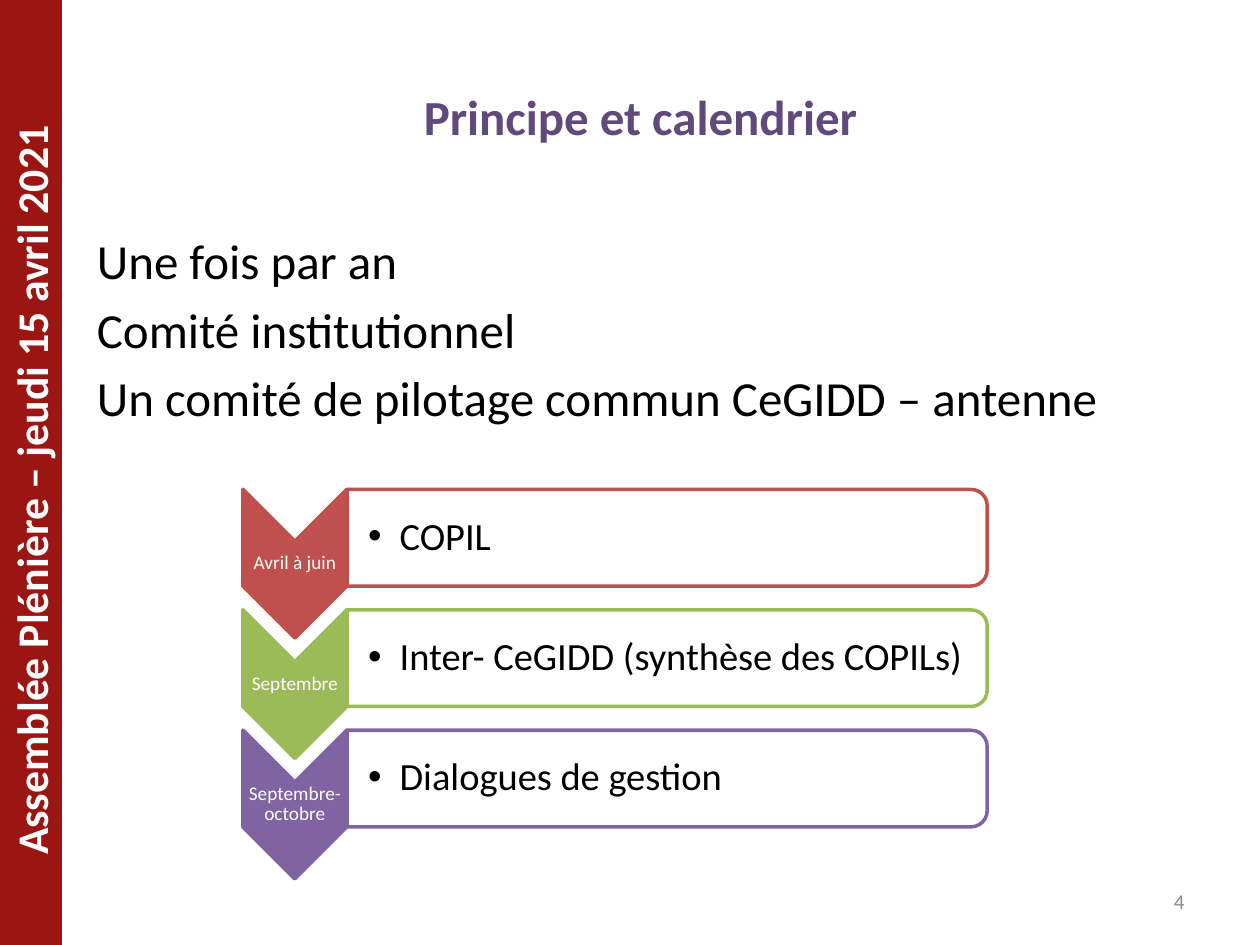
from lxml.etree import SubElement
from pptx import Presentation
from pptx.dml.color import RGBColor
from pptx.enum.shapes import MSO_SHAPE as Kind
from pptx.enum.text import MSO_ANCHOR as Anchor, PP_ALIGN as Align
from pptx.oxml.ns import qn
from pptx.util import Pt

FONT = "Calibri"
HUES = {
    "title": "604A7B", "band": "9B1513", "text": "000000", "white": "FFFFFF",
    "number": "8C8C8C", "red": "C0504D", "green": "9BBB59", "purple": "8064A2",
}
LINES = [
    "Une fois par an",
    "Comité institutionnel",
    "Un comité de pilotage commun CeGIDD – antenne",
]
STEPS = [
    ("Avril à juin", "COPIL", "red"),
    ("Septembre", "Inter- CeGIDD (synthèse des COPILs)", "green"),
    ("Septembre-octobre", "Dialogues de gestion", "purple"),
]
TOP, PITCH = 279.6, 68.8


def rgb(hue):
    return RGBColor.from_string(HUES[hue])


def style(para, size, hue, bold=False, align=Align.LEFT):
    para.alignment = align
    font = para.font
    font.name, font.size, font.bold = FONT, Pt(size), bold
    font.color.rgb = rgb(hue)


def add_text(slide, box, lines, size, hue, bold=False, align=Align.LEFT,
             anchor=Anchor.TOP, pad=(7.2, 3.6, 7.2, 3.6), wrap=True):
    shape = slide.shapes.add_textbox(*map(Pt, box))
    frame = shape.text_frame
    frame.word_wrap = wrap
    frame.vertical_anchor = anchor
    (frame.margin_left, frame.margin_top,
     frame.margin_right, frame.margin_bottom) = map(Pt, pad)
    frame.text = "\n".join(lines)
    for para in frame.paragraphs:
        style(para, size, hue, bold, align)
    return shape


def add_shape(slide, kind, box, fill, line=None, turn=0):
    shape = slide.shapes.add_shape(kind, *map(Pt, box))
    shape.shadow.inherit = False
    shape.rotation = turn
    shape.fill.solid()
    shape.fill.fore_color.rgb = rgb(fill)
    if line:
        shape.line.color.rgb = rgb(line)
        shape.line.width = Pt(2)
    else:
        shape.line.fill.background()


def add_bullet(para):
    props = para._p.get_or_add_pPr()
    props.set("marL", str(Pt(18)))
    props.set("indent", str(-Pt(18)))
    SubElement(props, qn("a:buFont"), typeface="Arial")
    SubElement(props, qn("a:buChar"), char="•")


def add_title(slide, text):
    title = slide.shapes.title
    title.left, title.top, title.width, title.height = map(Pt, (42, 21, 648, 90))
    frame = title.text_frame
    frame.text = text
    frame.vertical_anchor = Anchor.MIDDLE
    style(frame.paragraphs[0], 28, "title", True, Align.CENTER)


def add_band(slide, text):
    add_shape(slide, Kind.RECTANGLE, (0, 0, 35.4, 540), "band")
    label = add_text(slide, (-200, 261.3, 435.6, 37.7), [text], 25, "white",
                     True, Align.CENTER, wrap=False)
    label.rotation = 270


def add_step(slide, top, date, text, hue):
    add_shape(slide, Kind.CHEVRON, (126, top + 12.8, 85, 59.4), hue, hue, 90)
    label = add_text(slide, (138.8, top + 29.7, 59.4, 25.4), [date], 11, "white",
                     align=Align.CENTER, anchor=Anchor.MIDDLE, pad=[0.5] * 4)
    label.text_frame.paragraphs[0].line_spacing = 0.9
    add_shape(slide, Kind.ROUND_2_SAME_RECTANGLE,
              (353.6, top - 155.2, 55.2, 365.8), "white", hue, 90)
    item = add_text(slide, (198.2, top + 2.7, 363, 49.8), [text], 22, "text",
                    anchor=Anchor.MIDDLE, pad=(12.2, 1.4, 1.4, 1.4))
    para = item.text_frame.paragraphs[0]
    para.line_spacing = 0.9
    add_bullet(para)


def main():
    deck = Presentation()
    deck.slide_width, deck.slide_height = Pt(720), Pt(540)
    slide = deck.slides.add_slide(deck.slide_layouts[5])
    add_title(slide, "Principe et calendrier")
    body = add_text(slide, (48.3, 128.2, 663, 130.3), LINES, 28, "text")
    for para in body.text_frame.paragraphs:
        para.space_before = Pt(5.6)
    add_band(slide, "Assemblée Plénière – jeudi 15 avril 2021")
    add_text(slide, (516, 500.5, 168, 28.8), ["4"], 12, "number",
             align=Align.RIGHT, anchor=Anchor.MIDDLE)
    for row, step in enumerate(STEPS):
        add_step(slide, TOP + row * PITCH, *step)
    deck.save("out.pptx")


if __name__ == "__main__":
    main()
